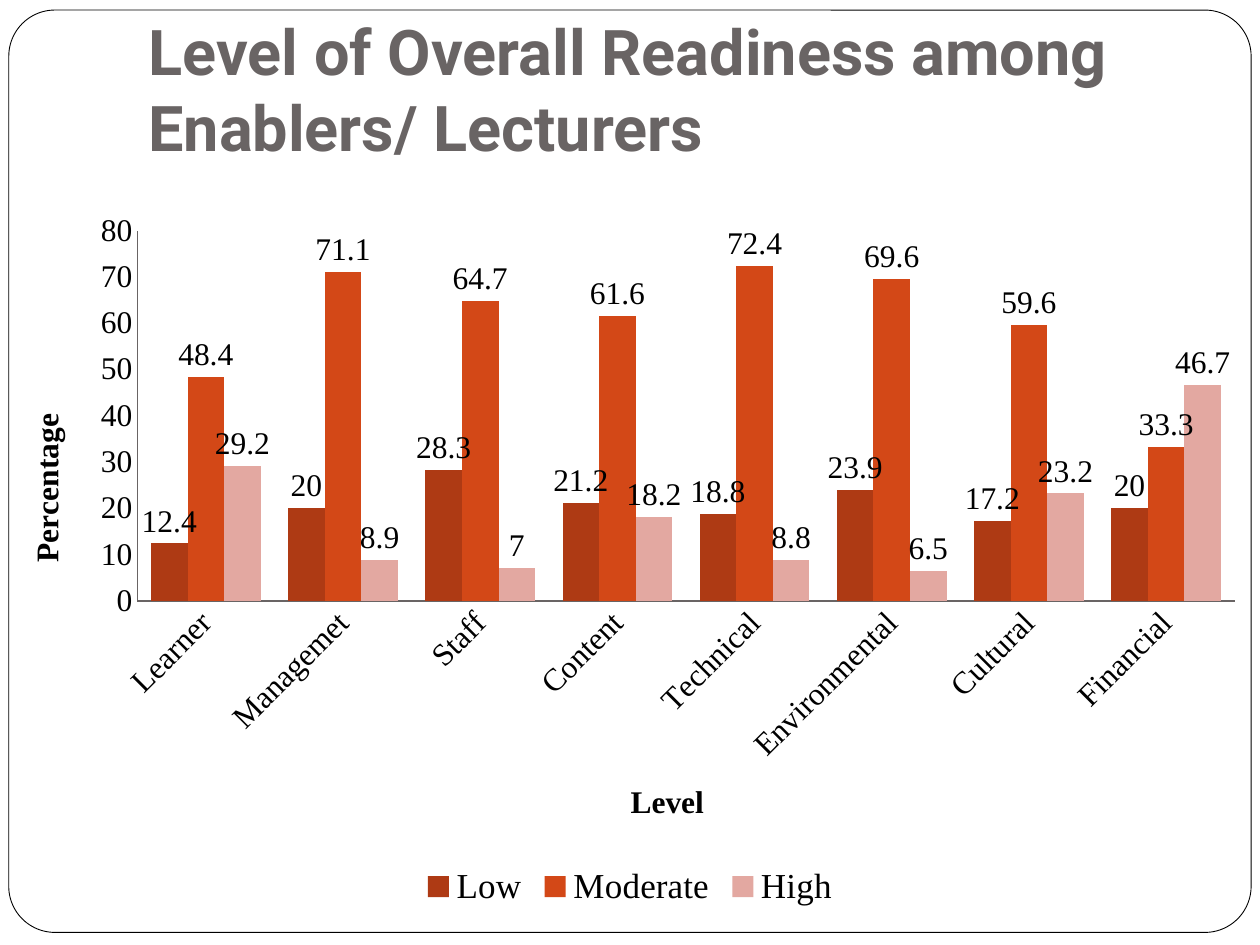
from lxml import etree
from pptx import Presentation
from pptx.chart.data import CategoryChartData
from pptx.dml.color import RGBColor
from pptx.enum.chart import XL_CHART_TYPE as ChartType
from pptx.enum.chart import XL_LABEL_POSITION as LabelPosition
from pptx.enum.chart import XL_LEGEND_POSITION as LegendPosition
from pptx.enum.chart import XL_TICK_MARK as TickMark
from pptx.enum.shapes import MSO_SHAPE as Preset
from pptx.enum.text import MSO_ANCHOR as Anchor
from pptx.oxml.ns import qn
from pptx.util import Inches, Pt

COLORS = {
    "paper": "FFFFFF", "ink": "000000", "title": "696464", "axis": "696464",
    "Low": "AE3A14", "Moderate": "D34817", "High": "E3A8A1",
}
LEVELS = ["Learner", "Managemet", "Staff", "Content",
          "Technical", "Environmental", "Cultural", "Financial"]
READINESS = {
    "Low": [12.4, 20, 28.3, 21.2, 18.8, 23.9, 17.2, 20],
    "Moderate": [48.4, 71.1, 64.7, 61.6, 72.4, 69.6, 59.6, 33.3],
    "High": [29.2, 8.9, 7, 18.2, 8.8, 6.5, 23.2, 46.7],
}


def rgb(name):
    """Return the palette colour with this name."""
    return RGBColor.from_string(COLORS[name])


def set_all(target, values):
    """Set each attribute of target from a dict."""
    for attribute, value in values.items():
        setattr(target, attribute, value)


def style_font(font, color="ink", **values):
    """Apply a palette colour and format values to a font."""
    set_all(font, values)
    font.color.rgb = rgb(color)


def place_in_chart(part, index, chart_size, place):
    """Lay out a chart part by its left, top, width and height in inches."""
    for previous in part.findall(qn("c:layout")):
        part.remove(previous)
    layout = etree.Element(qn("c:layout"))
    part.insert(index, layout)
    manual = etree.SubElement(layout, qn("c:manualLayout"))
    if len(place) == 4:
        etree.SubElement(manual, qn("c:layoutTarget"), val="inner")
    for key in ("x", "y"):
        etree.SubElement(manual, qn(f"c:{key}Mode"), val="edge")
    for key, length, whole in zip("xywh", place, chart_size * 2):
        etree.SubElement(manual, qn(f"c:{key}"), val=str(length / whole))


def add_frame(slide, box):
    """Draw the rounded border of the slide."""
    frame = slide.shapes.add_shape(Preset.ROUNDED_RECTANGLE, *map(Inches, box))
    frame.adjustments[0] = 0.05
    frame.shadow.inherit = False
    frame.fill.solid()
    frame.fill.fore_color.rgb = rgb("paper")
    frame.line.color.rgb = rgb("ink")
    frame.line.width = Pt(0.5)


def add_heading(slide, box, wording):
    """Write the heading, which grows upwards from the foot of its box."""
    text = slide.shapes.add_textbox(*map(Inches, box)).text_frame
    set_all(text, {"word_wrap": True, "vertical_anchor": Anchor.BOTTOM,
                   "margin_top": Inches(0.05), "margin_bottom": Inches(0.7)})
    run = text.paragraphs[0].add_run()
    run.text = wording
    style_font(run.font, "title", name="Roboto", size=Pt(36), bold=True)


def style_axis(axis, wording, chart_size, place):
    """Format an axis and place its title."""
    set_all(axis, {"has_major_gridlines": False, "has_title": True,
                   "major_tick_mark": TickMark.NONE,
                   "minor_tick_mark": TickMark.NONE})
    axis.format.line.color.rgb = rgb("axis")
    style_font(axis.tick_labels.font, size=Pt(18))
    title = axis.axis_title
    run = title.text_frame.paragraphs[0].add_run()
    run.text = wording
    style_font(run.font, name="Times New Roman", size=Pt(18), bold=True)
    place_in_chart(title._element, 1, chart_size, place)


def add_readiness_chart(slide, box):
    """Add the clustered columns of readiness by level."""
    data = CategoryChartData()
    data.categories = LEVELS
    for name, values in READINESS.items():
        data.add_series(name, values)
    chart = slide.shapes.add_chart(
        ChartType.COLUMN_CLUSTERED, *map(Inches, box), data).chart
    set_all(chart, {"has_title": False, "has_legend": True})
    style_font(chart.font, name="Times New Roman", size=Pt(18))
    set_all(chart.legend, {"position": LegendPosition.BOTTOM,
                           "include_in_layout": False})
    style_font(chart.legend.font, name="Times New Roman", size=Pt(20))

    plot = chart.plots[0]
    set_all(plot, {"gap_width": 75, "overlap": 0, "vary_by_categories": False,
                   "has_data_labels": True})
    set_all(plot.data_labels, {"show_value": True,
                               "position": LabelPosition.OUTSIDE_END})
    style_font(plot.data_labels.font, size=Pt(18))
    for series in plot.series:
        series.format.fill.solid()
        series.format.fill.fore_color.rgb = rgb(series.name)

    chart_size = box[2:]
    style_axis(chart.category_axis, "Level", chart_size, (4.96, 4.58))
    style_axis(chart.value_axis, "Percentage", chart_size, (0.17, 1.66))
    set_all(chart.value_axis, {"minimum_scale": 0, "maximum_scale": 80,
                               "major_unit": 10})
    label_body = chart.category_axis._element.find(
        f"{qn('c:txPr')}/{qn('a:bodyPr')}")
    label_body.set("rot", "-2700000")
    place_in_chart(chart._chartSpace.chart.plotArea, 0, chart_size,
                   (1.09, 0.25, 8.71, 2.94))


def main():
    """Build and save the slide."""
    deck = Presentation()
    set_all(deck, {"slide_width": Inches(10), "slide_height": Inches(7.5)})
    slide = deck.slides.add_slide(deck.slide_layouts[6])
    add_frame(slide, (0.07, 0.08, 9.86, 7.32))
    add_heading(slide, (1.08, 0.75, 8.5, 1.25),
                "Level of Overall Readiness among Enablers/ Lecturers")
    add_readiness_chart(slide, (0, 1.58, 10, 5.67))
    deck.save("out.pptx")


if __name__ == "__main__":
    main()
